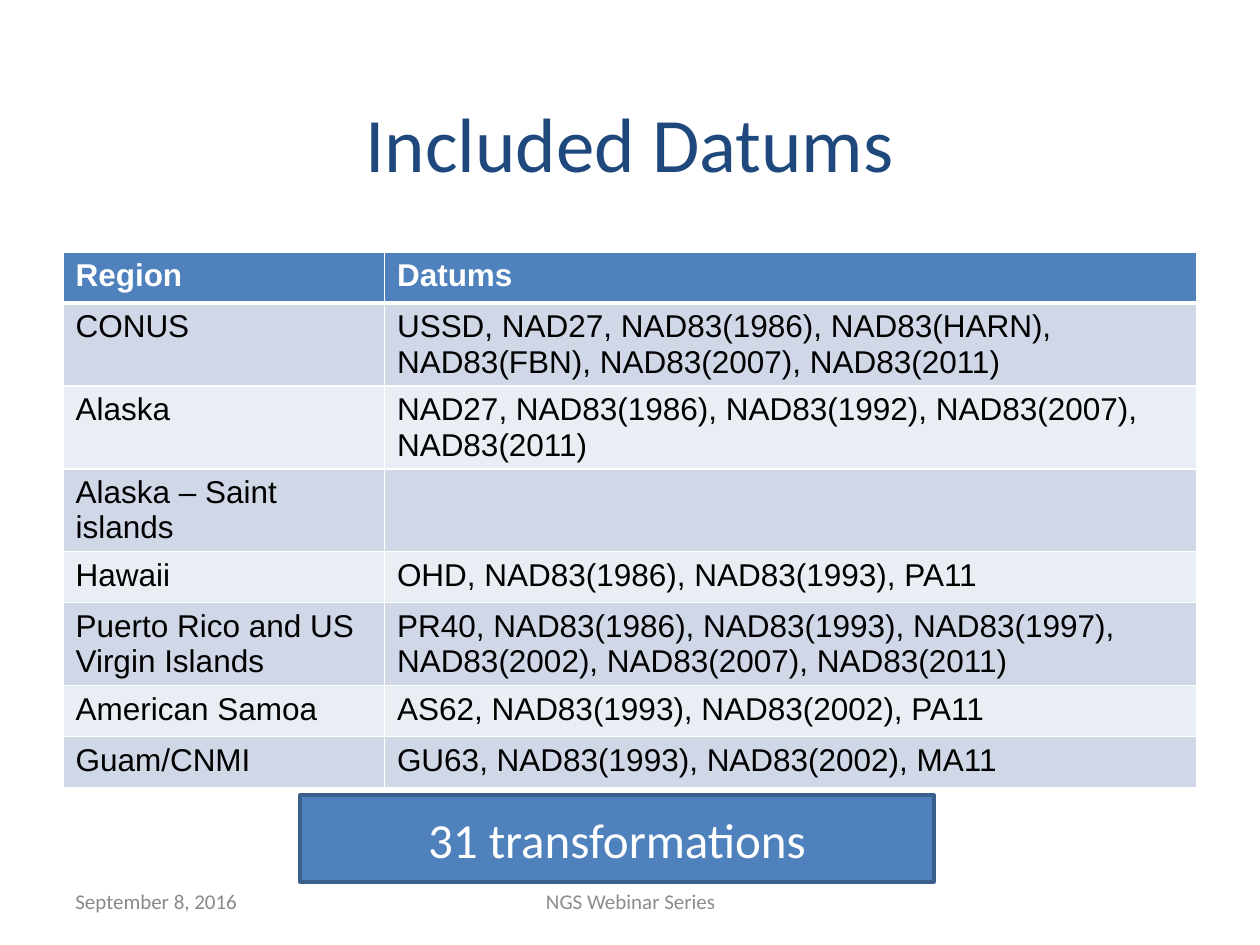
"""Build the slide that lists the datums included for each region."""
from lxml import etree
from pptx import Presentation, util as u
from pptx.dml.color import RGBColor
from pptx.enum import shapes, text
from pptx.oxml.ns import qn

HUES = {"navy": "1F497D", "blue": "4F81BD", "edge": "3A5F8C", "white": "FFFFFF",
        "black": "000000", "dark": "D0D8E8", "pale": "E9EDF4",
        "date": "898989", "foot": "8C8C8C"}

ROWS = [
    ("Region", "Datums"),
    ("CONUS", "USSD, NAD27, NAD83(1986), NAD83(HARN), NAD83(FBN), NAD83(2007), NAD83(2011)"),
    ("Alaska", "NAD27, NAD83(1986), NAD83(1992), NAD83(2007), NAD83(2011)"),
    ("Alaska – Saint islands", ""),
    ("Hawaii", "OHD, NAD83(1986), NAD83(1993), PA11"),
    ("Puerto Rico and US Virgin Islands",
     "PR40, NAD83(1986), NAD83(1993), NAD83(1997), NAD83(2002), NAD83(2007), NAD83(2011)"),
    ("American Samoa", "AS62, NAD83(1993), NAD83(2002), PA11"),
    ("Guam/CNMI", "GU63, NAD83(1993), NAD83(2002), MA11"),
]
WIDTHS = (6.48, 16.38)
LIMITS = (20, 50)
SHORT, TALL = 1.03, 1.67

LABELS = [
    ("Included Datums", (1.27, 1.27, 22.86, 3.18), dict(size=44, hue="navy", mid=True)),
    ("September 8, 2016", (1.27, 17.65, 5.92, 1.02), dict(size=12, hue="date")),
    ("NGS Webinar Series", (8.69, 17.65, 8.05, 1.02), dict(size=12, hue="foot", mid=True)),
]
BADGE = ("31 transformations", (6.05, 16.03, 12.78, 1.75),
         dict(size=28, hue="white", mid=True))


def tint(name):
    return RGBColor.from_string(HUES[name])


def paint(item, name):
    item.fill.solid()
    item.fill.fore_color.rgb = tint(name)


def write(frame, words, size=18, hue="black", face="Calibri", bold=False, mid=False):
    frame.word_wrap = True
    para = frame.paragraphs[0]
    para.alignment = text.PP_ALIGN.CENTER if mid else text.PP_ALIGN.LEFT
    font = para.font
    if words:
        run = para.add_run()
        run.text = words
        font = run.font
    font.size, font.name, font.bold = u.Pt(size), face, bold
    font.color.rgb = tint(hue)


def border(cell, head):
    props = cell._tc.get_or_add_tcPr()
    for side in ("lnL", "lnR", "lnT", "lnB"):
        wide = 3 if head and side == "lnB" else 1
        line = etree.SubElement(props, qn(f"a:{side}"), w=str(u.Pt(wide)))
        fill = etree.SubElement(line, qn("a:solidFill"))
        etree.SubElement(fill, qn("a:srgbClr"), val=HUES["white"])


def label(slide, words, place, style):
    box = slide.shapes.add_textbox(*map(u.Cm, place))
    box.text_frame.vertical_anchor = text.MSO_ANCHOR.MIDDLE
    write(box.text_frame, words, **style)


def height(row):
    wraps = any(len(words) > limit for words, limit in zip(row, LIMITS))
    return TALL if wraps else SHORT


def grid(slide):
    highs = [height(row) for row in ROWS]
    frame = slide.shapes.add_table(len(ROWS), len(WIDTHS), u.Cm(1.27), u.Cm(5.08),
                                   u.Cm(sum(WIDTHS)), u.Cm(sum(highs)))
    table = frame.table
    for col, wide in zip(table.columns, WIDTHS):
        col.width = u.Cm(wide)
    for r, row in enumerate(ROWS):
        head = r == 0
        table.rows[r].height = u.Cm(highs[r])
        for c, words in enumerate(row):
            cell = table.cell(r, c)
            cell.margin_bottom = 0
            border(cell, head)
            paint(cell, "blue" if head else "dark" if r % 2 else "pale")
            write(cell.text_frame, words, face="Arial", bold=head,
                  hue="white" if head else "black")


def badge(slide, words, place, style):
    box = slide.shapes.add_shape(shapes.MSO_SHAPE.RECTANGLE, *map(u.Cm, place))
    box.shadow.inherit = False
    paint(box, "blue")
    box.line.color.rgb = tint("edge")
    box.line.width = u.Pt(2)
    box.text_frame.vertical_anchor = text.MSO_ANCHOR.MIDDLE
    write(box.text_frame, words, **style)


def main():
    deck = Presentation()
    deck.slide_width, deck.slide_height = u.Cm(25.4), u.Cm(19.05)
    slide = deck.slides.add_slide(deck.slide_layouts[6])
    title, *feet = LABELS
    label(slide, *title)
    grid(slide)
    for foot in feet:
        label(slide, *foot)
    badge(slide, *BADGE)
    deck.save("out.pptx")


if __name__ == "__main__":
    main()
